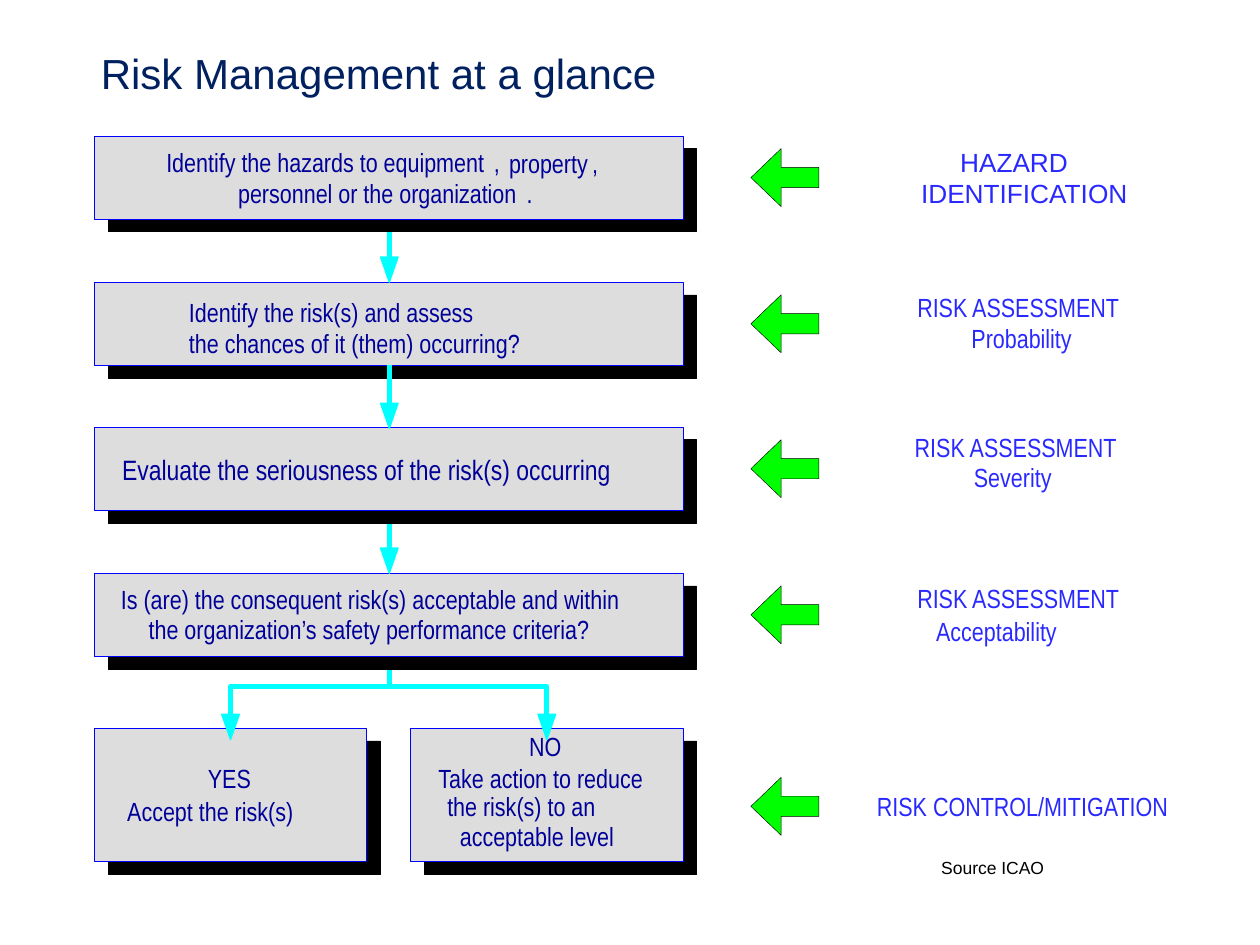
"""Build the risk management flow slide."""
import dataclasses
import typing

import pptx
import pptx.dml.color
import pptx.enum.text
import pptx.oxml
import pptx.util

Inches = pptx.util.Inches
Points = typing.Sequence[typing.Tuple[float, float]]


@dataclasses.dataclass(frozen=True)
class Theme:
    title: str = "002060"
    step: str = "000099"
    label: str = "2929FF"
    black: str = "000000"
    panel: str = "DDDDDD"
    edge: str = "0000FF"
    flow: str = "00FFFF"
    arrow: str = "00FF00"
    sans: str = "Arial"
    narrow: str = "Arial Narrow"
    head: float = 24
    big: float = 16
    body: float = 15
    small: float = 10
    thin: float = 0.25
    tip: float = 0.75
    thick: float = 2.88


@dataclasses.dataclass(frozen=True)
class Box:
    left: float
    top: float
    width: float
    height: float


@dataclasses.dataclass(frozen=True)
class Text:
    words: str
    left: float
    top: float
    width: float
    height: float = 0.24
    color: str = Theme.step
    font: str = Theme.narrow
    size: float = Theme.body
    inset: float = 0
    wrap: bool = False
    middle: bool = False
    before: float = 0


THEME = Theme()
TOPS = (1.08, 2.24, 3.39, 4.55)
LEFT, WIDE, HIGH = 0.75, 4.67, 0.66
DROP_X, DROP_Y = 0.11, 0.1
MID = 3.09
ENDS = (1.83, 4.34)
STEPS = [Box(LEFT, top, WIDE, HIGH) for top in TOPS]
ANSWERS = [Box(left, 5.78, 2.16, 1.06) for left in (LEFT, 3.26)]
LABEL = THEME.label

TEXTS = (
    Text("Risk Management at a glance", 0.75, 0.33, 8.5, 0.5, THEME.title,
         THEME.sans, THEME.head, 0.05, True, True),
    Text("Identify the hazards to equipment", 1.32, 1.16, 2.54),
    Text(",", 3.92, 1.16, 0.14),
    Text("property", 4.04, 1.17, 0.64),
    Text(",", 4.7, 1.17, 0.14),
    Text("personnel or the organization", 1.89, 1.41, 2.23),
    Text(".", 4.18, 1.41, 0.14),
    Text("Identify the risk(s) and assess\nthe chances of it (them) occurring?",
         1.5, 2.35, 2.64, 0.47),
    Text("Evaluate the seriousness of the risk(s) occurring",
         0.97, 3.59, 3.95, 0.25, size=THEME.big),
    Text("Is (are) the consequent risk(s) acceptable and within",
         0.96, 4.63, 3.97),
    Text("the organization’s safety performance criteria?", 1.18, 4.87, 3.52),
    Text("YES", 1.65, 6.05, 0.36),
    Text("Accept the risk(s)", 1.01, 6.31, 1.33),
    Text("NO", 4.2, 5.8, 0.27),
    Text("Take action to reduce", 3.48, 6.05, 1.69),
    Text("the risk(s) to an", 3.55, 6.27, 1.24),
    Text("acceptable level", 3.65, 6.51, 1.24),
    Text("HAZARD", 7.62, 1.16, 0.93, 0.23, LABEL, THEME.sans),
    Text("IDENTIFICATION", 7.31, 1.41, 1.65, 0.23, LABEL, THEME.sans),
    Text("RISK ASSESSMENT", 7.28, 2.31, 1.62, color=LABEL),
    Text("Probability", 7.71, 2.56, 0.81, color=LABEL),
    Text("RISK ASSESSMENT", 7.26, 3.42, 1.62, color=LABEL),
    Text("Severity", 7.73, 3.66, 0.63, color=LABEL),
    Text("RISK ASSESSMENT", 7.28, 4.62, 1.62, color=LABEL),
    Text("Acceptability", 7.43, 4.88, 0.97, color=LABEL),
    Text("RISK CONTROL/MITIGATION", 6.96, 6.27, 2.33, color=LABEL),
    Text("Source ICAO", 7.42, 6.75, 1.42, 0.25, THEME.black, THEME.sans,
         THEME.small, 0.05, True, before=6),
)


def tint(name: str) -> pptx.dml.color.RGBColor:
    return pptx.dml.color.RGBColor.from_string(name)


def paint(shape, fill: typing.Optional[str], line: str, width: float) -> None:
    shape.shadow.inherit = False
    if fill:
        shape.fill.solid()
        shape.fill.fore_color.rgb = tint(fill)
    else:
        shape.fill.background()
    shape.line.color.rgb = tint(line)
    shape.line.width = pptx.util.Pt(width)


def draw_box(shapes, box: Box) -> None:
    layers = ((DROP_X, DROP_Y, THEME.black, THEME.black),
              (0, 0, THEME.panel, THEME.edge))
    for right, down, fill, line in layers:
        shape = shapes.add_shape(
            pptx.enum.shapes.MSO_SHAPE.RECTANGLE, Inches(box.left + right),
            Inches(box.top + down), Inches(box.width), Inches(box.height))
        paint(shape, fill, line, THEME.thin)


def draw_path(shapes, points: Points, fill: typing.Optional[str],
              line: str, width: float) -> None:
    first, *rest = [(Inches(x), Inches(y)) for x, y in points]
    form = shapes.build_freeform(*first)
    form.add_line_segments(rest, close=fill is not None)
    paint(form.convert_to_shape(), fill, line, width)


def draw_stem(shapes, top: float) -> None:
    stem = shapes.add_connector(
        pptx.enum.shapes.MSO_CONNECTOR.STRAIGHT, Inches(MID),
        Inches(top + HIGH), Inches(MID), Inches(top + 0.98))
    stem.line.color.rgb = tint(THEME.flow)
    stem.line.width = pptx.util.Pt(THEME.thick)
    props = stem.element.spPr
    props.append(pptx.oxml.parse_xml(
        '<a:effectLst xmlns:a='
        '"http://schemas.openxmlformats.org/drawingml/2006/main"/>'))


def draw_tip(shapes, x: float, y: float) -> None:
    points = ((x + 0.07, y), (x, y + 0.2), (x - 0.07, y))
    draw_path(shapes, points, THEME.flow, THEME.flow, THEME.tip)


def draw_arrow(shapes, y: float) -> None:
    tip, neck, tail, half, slim = 5.96, 6.2, 6.5, 0.23, 0.08
    points = ((tip, y), (neck, y + half), (neck, y + slim), (tail, y + slim),
              (tail, y - slim), (neck, y - slim), (neck, y - half))
    draw_path(shapes, points, THEME.arrow, THEME.black, THEME.thin)


def draw_text(shapes, text: Text) -> None:
    frame = shapes.add_textbox(Inches(text.left), Inches(text.top),
                               Inches(text.width),
                               Inches(text.height)).text_frame
    frame.margin_left = frame.margin_right = Inches(text.inset)
    frame.margin_top = frame.margin_bottom = Inches(text.inset)
    frame.word_wrap = text.wrap
    frame.auto_size = pptx.enum.text.MSO_AUTO_SIZE.SHAPE_TO_FIT_TEXT
    if text.middle:
        frame.vertical_anchor = pptx.enum.text.MSO_ANCHOR.MIDDLE
    frame.text = text.words
    for para in frame.paragraphs:
        para.space_before = pptx.util.Pt(0)
        para.font.name = text.font
        para.font.size = pptx.util.Pt(text.size)
        para.font.color.rgb = tint(text.color)


def main() -> None:
    deck = pptx.Presentation()
    deck.slide_width, deck.slide_height = Inches(10), Inches(7.5)
    shapes = deck.slides.add_slide(deck.slide_layouts[6]).shapes
    for top in (TOPS[0], TOPS[2]):
        draw_stem(shapes, top)
    for end in ENDS:
        bend = ((MID, 5.21), (MID, 5.45), (end, 5.45), (end, 5.69))
        draw_path(shapes, bend, None, THEME.flow, THEME.thick)
    for box in STEPS + ANSWERS:
        draw_box(shapes, box)
    draw_stem(shapes, TOPS[1])
    for top in TOPS[:3]:
        draw_tip(shapes, MID, top + 0.96)
    for end in ENDS:
        draw_tip(shapes, end, 5.67)
    for y in [top + HIGH / 2 for top in TOPS] + [6.4]:
        draw_arrow(shapes, y)
    for text in TEXTS:
        draw_text(shapes, text)
    deck.save("out.pptx")


if __name__ == "__main__":
    main()
